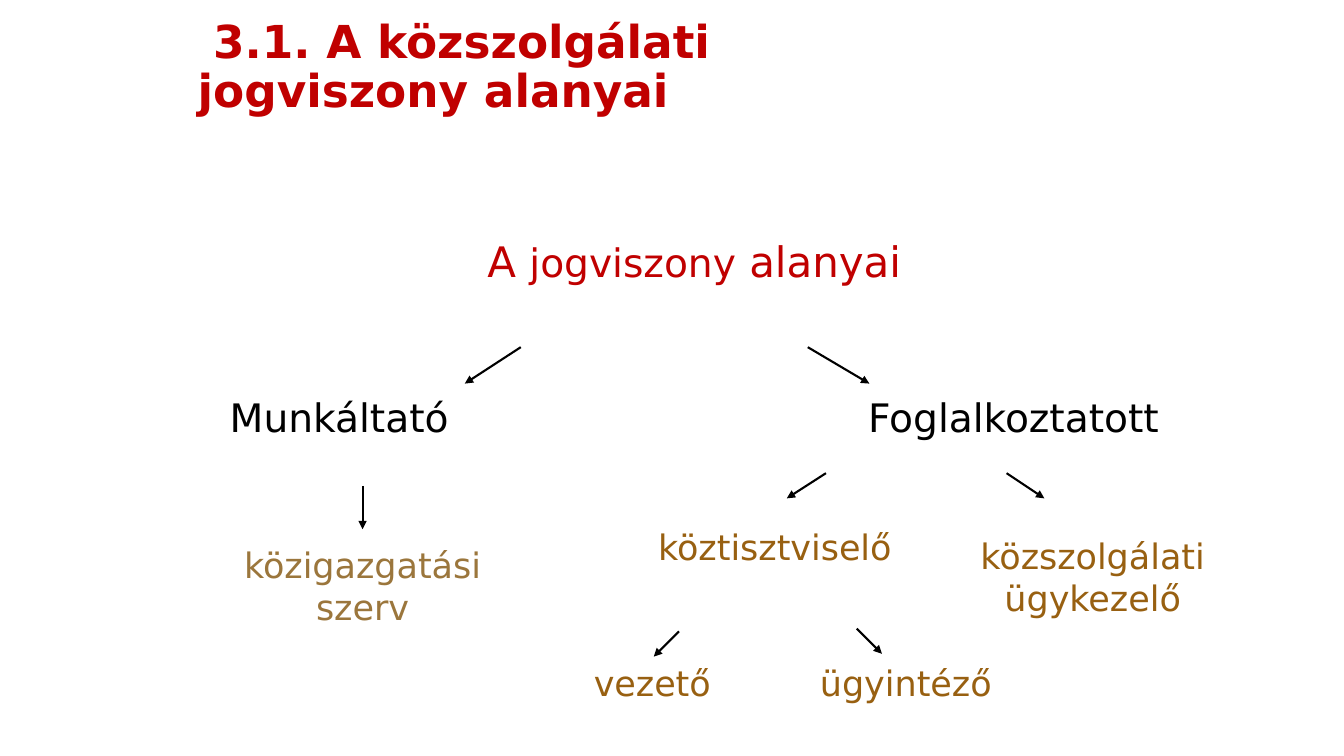
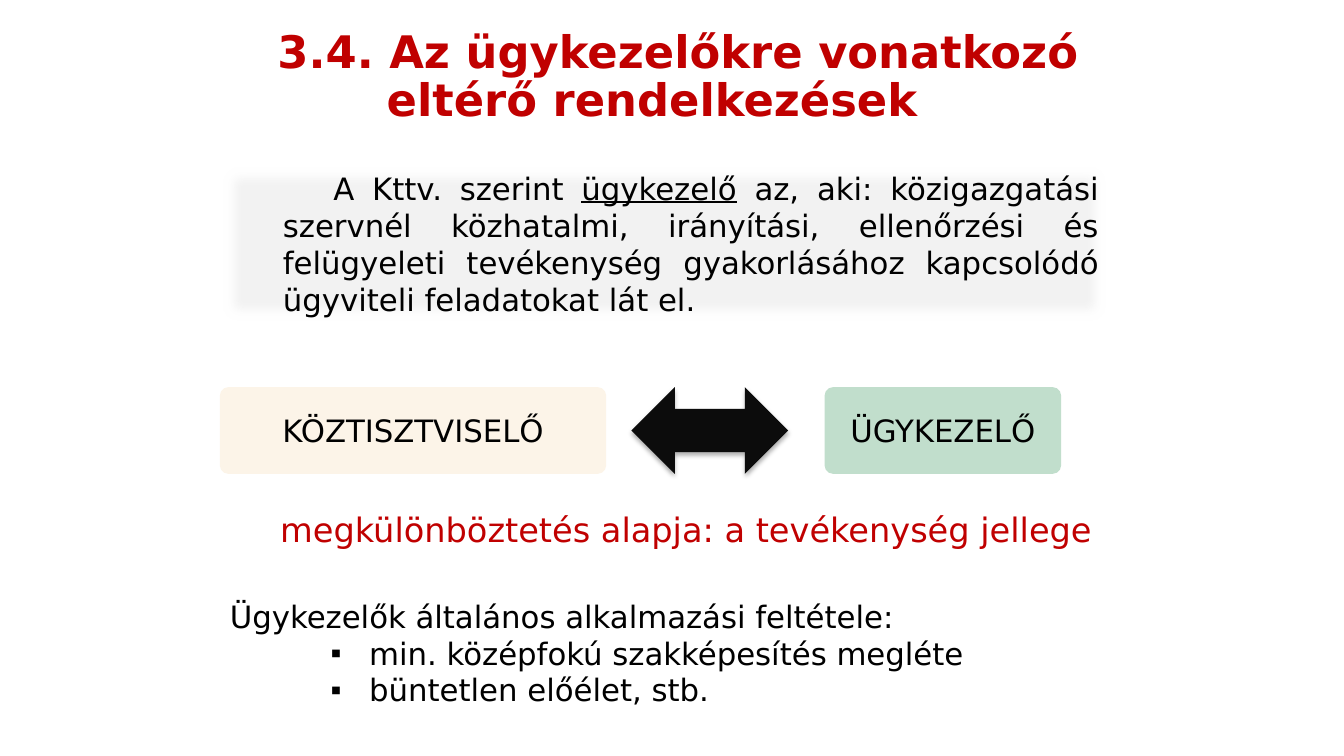
from lxml.etree import SubElement
from pptx import Presentation
from pptx.dml.color import RGBColor
from pptx.enum.shapes import MSO_CONNECTOR, MSO_SHAPE
from pptx.enum.text import MSO_ANCHOR, MSO_AUTO_SIZE, PP_ALIGN
from pptx.oxml.ns import qn
from pptx.util import Pt

HUES = {
    "red": "C00000", "black": "000000", "tan": "9B763C", "brown": "986011",
    "grey": "F2F2F2", "green": "C1DECC", "cream": "FCF4E8", "coal": "0C0C0C",
}
FONT = "DejaVu Sans"


def hue(name):
    return RGBColor.from_string(HUES[name])


def node(root, tag, **attrs):
    return SubElement(root, qn(tag), {key: str(val) for key, val in attrs.items()})


def write(para, text, size=22, color="black", bold=False, under=False):
    for i, line in enumerate(text.split("\n")):
        if i:
            para.add_line_break()
        run = para.add_run()
        run.text = line
        font = run.font
        font.name, font.size, font.bold, font.underline = FONT, Pt(size), bold, under
        font.color.rgb = hue(color)


def indent(para, left, first):
    props = para._p.get_or_add_pPr()
    props.set("marL", str(Pt(left)))
    props.set("indent", str(Pt(first)))
    return props


class Deck:
    """Holds the shared style and the current slide."""

    def __init__(self):
        self.show = Presentation()
        self.show.slide_width, self.show.slide_height = Pt(960), Pt(540)

    def start(self, layout):
        self.slide = self.show.slides.add_slide(self.show.slide_layouts[layout])

    def place(self, shape, box, anchor):
        shape.left, shape.top, shape.width, shape.height = map(Pt, box)
        frame = shape.text_frame
        frame.word_wrap = True
        frame.auto_size = MSO_AUTO_SIZE.NONE
        frame.vertical_anchor = anchor
        return frame.paragraphs[0]

    def title(self, text, box, size, left, first):
        para = self.place(self.slide.shapes.title, box, MSO_ANCHOR.MIDDLE)
        indent(para, left, first)
        para.alignment, para.line_spacing = PP_ALIGN.LEFT, 0.9
        write(para, text, size=size, color="red", bold=True)

    def label(self, parts, box, align=PP_ALIGN.CENTER, anchor=MSO_ANCHOR.TOP, **style):
        shape = self.slide.shapes.add_textbox(0, 0, 0, 0)
        para = self.place(shape, box, anchor)
        para.alignment = align
        for text, size in parts:
            write(para, text, size=size, **style)

    def arrow(self, start, end):
        line = self.slide.shapes.add_connector(
            MSO_CONNECTOR.STRAIGHT, *map(Pt, start + end))
        line.line.color.rgb, line.line.width = hue("black"), Pt(1.5)
        props = line._element.spPr
        node(props.find(qn("a:ln")), "a:tailEnd", type="triangle")
        node(props, "a:effectLst")

    def block(self, kind, box, fill):
        shape = self.slide.shapes.add_shape(kind, 0, 0, 0, 0)
        para = self.place(shape, box, MSO_ANCHOR.MIDDLE)
        para.alignment = PP_ALIGN.CENTER
        shape.fill.solid()
        shape.fill.fore_color.rgb = hue(fill)
        shape.line.fill.background()
        shape.shadow.inherit = False
        return shape, para, shape._element.spPr.find(qn("a:effectLst"))

    def card(self, text, box, fill):
        shape, para, _ = self.block(MSO_SHAPE.ROUNDED_RECTANGLE, box, fill)
        shape.adjustments[0] = 0.1
        write(para, text)

    def panel(self, parts, box):
        _, para, effects = self.block(MSO_SHAPE.RECTANGLE, box, "grey")
        node(effects, "a:softEdge", rad=Pt(9))
        indent(para, 38, 36)
        para.alignment = PP_ALIGN.JUSTIFY
        for text, under in parts:
            write(para, text, under=under)

    def link(self, box):
        _, _, effects = self.block(MSO_SHAPE.LEFT_RIGHT_ARROW, box, "coal")
        shade = node(effects, "a:outerShdw", blurRad=Pt(3.5), dist=Pt(2.2),
                     dir=90 * 60000, rotWithShape=0)
        tint = node(shade, "a:srgbClr", val=HUES["black"])
        node(tint, "a:alpha", val=32000)

    def points(self, head, items, box):
        body = self.slide.placeholders[1]
        para = self.place(body, box, MSO_ANCHOR.TOP)
        node(indent(para, 0, 0), "a:buNone")
        para.space_before = Pt(0)
        write(para, head)
        for item in items:
            para = body.text_frame.add_paragraph()
            para.level = 1
            node(indent(para, 99.5, -27.5), "a:buChar", char="▪")
            para.space_before = Pt(0)
            write(para, item)


def parties(deck):
    deck.start(5)
    deck.title("3.1. A közszolgálati\njogviszony alanyai", (134, 9, 635, 79), 32.4, 0, 11)
    for start, end in [
        ((372, 248), (332, 274)), ((577, 248), (621, 274)),
        ((259, 347), (259, 378)), ((590, 338), (562, 356)),
        ((719, 338), (746, 356)), ((485, 451), (467, 469)),
        ((612, 449), (630, 467)),
    ]:
        deck.arrow(start, end)
    deck.label([("A ", 30), ("jogviszony", 28), (" alanyai", 30)],
               (136, 164, 720, 44), anchor=MSO_ANCHOR.MIDDLE, color="red")
    for text, left in [("Munkáltató", 157), ("Foglalkoztatott", 613)]:
        deck.label([(text, 28)], (left, 276, 240, 44),
                   align=PP_ALIGN.LEFT, anchor=MSO_ANCHOR.MIDDLE)
    for text, box, color in [
        ("közigazgatási szerv", (143, 384.5, 232, 68), "tan"),
        ("köztisztviselő", (446, 372, 215, 37), "brown"),
        ("közszolgálati ügykezelő", (678, 378, 205, 68), "brown"),
        ("vezető", (401, 469, 130, 37), "brown"),
        ("ügyintéző", (549, 469, 196, 37), "brown"),
    ]:
        deck.label([(text, 25)], box, color=color)


def clerks(deck):
    deck.start(1)
    deck.title("3.4. Az ügykezelőkre vonatkozó\neltérő rendelkezések",
               (191, 9, 603, 93), 32, 78, -78)
    deck.panel([
        ("A Kttv. szerint ", False),
        ("ügykezelő", True),
        (" az, aki: közigazgatási szervnél közhatalmi, irányítási, ellenőrzési és "
         "felügyeleti tevékenység gyakorlásához kapcsolódó ügyviteli feladatokat lát el.",
         False),
    ], (157, 117, 635, 114))
    top, high = 276.5, 62
    deck.card("KÖZTISZTVISELŐ", (157, top, 276, high), "cream")
    deck.link((451, top, 112, high))
    deck.card("ÜGYKEZELŐ", (589, top, 169, high), "green")
    deck.label([("megkülönböztetés alapja: a tevékenység jellege", 24)],
               (193, 360, 683, 36), align=PP_ALIGN.LEFT, color="red")
    deck.points("Ügykezelők általános alkalmazási feltétele:",
                ["min. középfokú szakképesítés megléte", "büntetlen előélet, stb."],
                (157, 423, 683, 87))


def main():
    deck = Deck()
    parties(deck)
    clerks(deck)
    deck.show.save("out.pptx")


if __name__ == "__main__":
    main()
